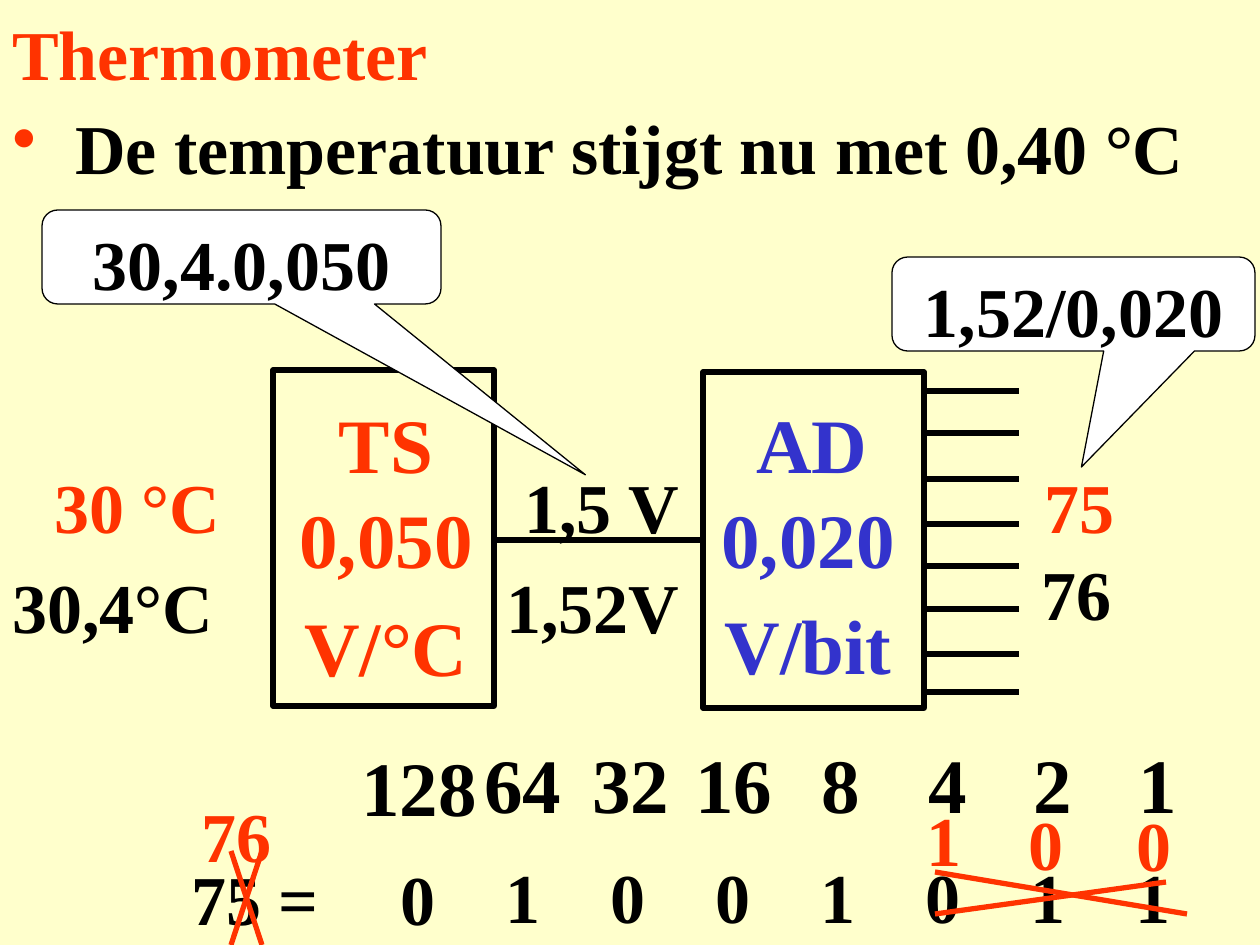
from dataclasses import dataclass

from lxml.etree import SubElement
from pptx import Presentation
from pptx.dml.color import RGBColor
from pptx.enum.shapes import MSO_CONNECTOR, MSO_SHAPE
from pptx.enum.text import MSO_ANCHOR, PP_ALIGN
from pptx.oxml.ns import qn
from pptx.util import Emu, Pt


@dataclass(frozen=True)
class Theme:
    face: str = "Times New Roman"
    paper: str = "FFFFCC"
    ink: str = "000000"
    red: str = "FF3300"
    blue: str = "3333CC"
    white: str = "FFFFFF"
    body: int = 40
    large: int = 44
    thick: float = 3
    thin: float = 0.75


THEME = Theme()
SCALE = 914400 / 126


def px(n):
    return Emu(round(n * SCALE))


def rgb(code):
    return RGBColor.from_string(code)


def write(frame, words, color, size, align):
    para = frame.paragraphs[0]
    para.text = words
    para.alignment = align
    font = para.font
    font.name, font.size, font.bold = THEME.face, Pt(size), True
    font.color.rgb = rgb(color)
    return para


def label(slide, words, x, y, w, color=THEME.ink, size=THEME.body,
          align=PP_ALIGN.LEFT, h=97):
    box = slide.shapes.add_textbox(px(x), px(y), px(w), px(h))
    box.text_frame.word_wrap = True
    return write(box.text_frame, words, color, size, align), box.text_frame


def wire(slide, x1, y1, x2, y2, color=THEME.ink):
    line = slide.shapes.add_connector(
        MSO_CONNECTOR.STRAIGHT, px(x1), px(y1), px(x2), px(y2))
    line.line.color.rgb = rgb(color)
    line.line.width = Pt(THEME.thick)
    SubElement(line._element.spPr, qn("a:effectLst"))


def shape(slide, kind, x, y, w, h, width):
    item = slide.shapes.add_shape(kind, px(x), px(y), px(w), px(h))
    item.shadow.inherit = False
    item.line.color.rgb = rgb(THEME.ink)
    item.line.width = Pt(width)
    return item


def heading(slide, x, y, w):
    """Title with one bullet line below it."""
    _, top = label(slide, "Thermometer", x, y, w, THEME.red, h=105)
    para, low = label(slide, "De temperatuur stijgt nu met 0,40 °C",
                      x, y + 94, w, h=105)
    for frame in (top, low):
        frame.vertical_anchor = MSO_ANCHOR.MIDDLE
    props = para._p.get_or_add_pPr()
    props.set("marL", str(px(63)))
    props.set("indent", str(px(-63)))
    tint = SubElement(props, qn("a:buClr"))
    SubElement(tint, qn("a:srgbClr")).set("val", THEME.red)
    SubElement(props, qn("a:buChar")).set("char", "•")


def block(slide, x, y, color, rows):
    """Framed block; each row is (words, left, top, width)."""
    box = shape(slide, MSO_SHAPE.RECTANGLE, x, y, 221, 336, THEME.thick)
    box.fill.background()
    for words, dx, dy, w in rows:
        label(slide, words, x + dx, y + dy, w, color, THEME.large,
              PP_ALIGN.CENTER, 105)


def pins(slide, x, y):
    for dy in (0, 42, 88, 133, 175, 218, 263, 301):
        wire(slide, x, y + dy, x + 95, y + dy)


def circuit(slide, x, y):
    """Sensor and converter with the values before and after the rise."""
    block(slide, x, y, THEME.red, [
        ("TS", 29, 20, 168), ("0,050", 8, 115, 210), ("V/°C", 8, 223, 210)])
    block(slide, x + 430, y + 2, THEME.blue, [
        ("AD", 30, 18, 158), ("0,020", 0, 113, 210), ("V/bit", 0, 219, 210)])
    wire(slide, x + 221, y + 170, x + 430, y + 170)
    pins(slide, x + 651, y + 21)
    for words, dx, dy, w, color in (
            ("30 °C", -231, 87, 199, THEME.red),
            ("1,5 V", 239, 87, 199, THEME.ink),
            ("75", 759, 87, 123, THEME.red),
            ("30,4°C", -273, 187, 262, THEME.ink),
            ("1,52V", 221, 187, 210, THEME.ink),
            ("76", 756, 174, 105, THEME.ink)):
        label(slide, words, x + dx, y + dy, w, color)


def callout(slide, words, x, y, w, tail):
    item = shape(slide, MSO_SHAPE.ROUNDED_RECTANGULAR_CALLOUT,
                 x, y, w, 94, THEME.thin)
    item.fill.solid()
    item.fill.fore_color.rgb = rgb(THEME.white)
    for i, value in enumerate((*tail, 0.167)):
        item.adjustments[i] = value
    frame = item.text_frame
    frame.word_wrap = True
    frame.vertical_anchor = MSO_ANCHOR.TOP
    write(frame, words, THEME.ink, THEME.body, PP_ALIGN.CENTER)


def cross(slide, down, up):
    for ends in (down, up):
        wire(slide, *ends, THEME.red)


def binary(slide, x, y):
    """Bit weights over the old bits, with the changed ones struck out."""
    lefts = (-39, 84, 192, 295, 421, 528, 633, 738)
    for i, (dx, bit) in enumerate(zip(lefts, "01001011")):
        weight = 2 ** (7 - i)
        label(slide, str(weight), x + dx, y + (3 if i == 0 else 0),
              147 if i == 0 else 123, size=THEME.large, h=105)
        label(slide, bit, x + 105 * i, y + (119 if i == 0 else 117), 84)
    label(slide, "75 =", x - 209, y + 119, 168)
    cross(slide, (x - 157, y + 121, x - 126, y + 215),
          (x - 126, y + 121, x - 157, y + 215))
    cross(slide, (x + 547, y + 142, x + 799, y + 184),
          (x + 547, y + 184, x + 778, y + 152))
    for words, dx, dy in (("76", -199, 56), ("1", 526, 60),
                          ("0", 628, 64), ("0", 736, 65)):
        label(slide, words, x + dx, y + dy, 105, THEME.red)


def main():
    deck = Presentation()
    deck.slide_width, deck.slide_height = px(1260), px(945)
    slide = deck.slides.add_slide(deck.slide_layouts[6])
    fill = slide.background.fill
    fill.solid()
    fill.fore_color.rgb = rgb(THEME.paper)
    heading(slide, 0, 0, 1260)
    circuit(slide, 273, 370)
    callout(slide, "30,4.0,050", 42, 210, 399, (0.862, 2.317))
    callout(slide, "1,52/0,020", 892, 257, 363, (0.022, 1.734))
    binary(slide, 388, 730)
    deck.save("out.pptx")


if __name__ == "__main__":
    main()
